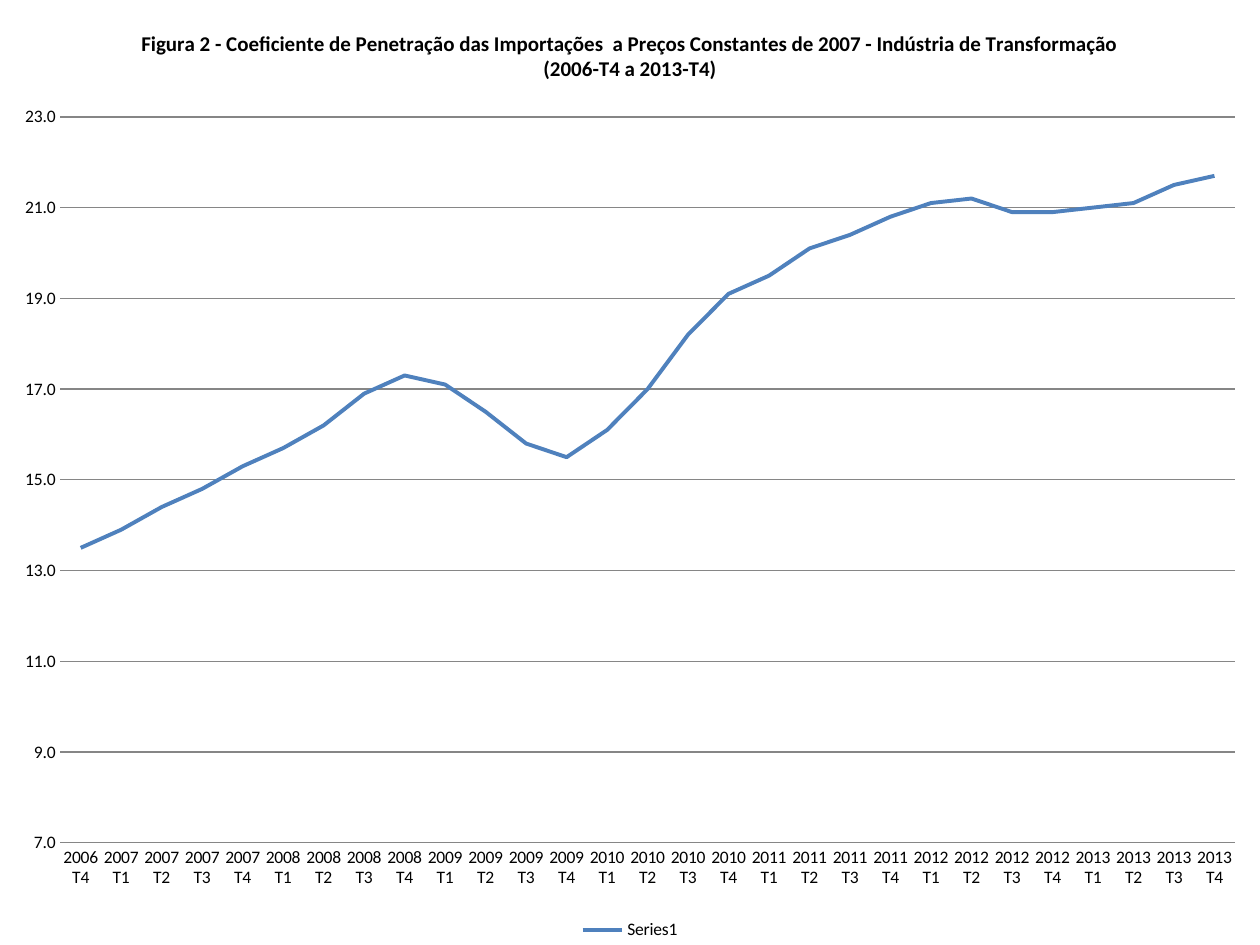
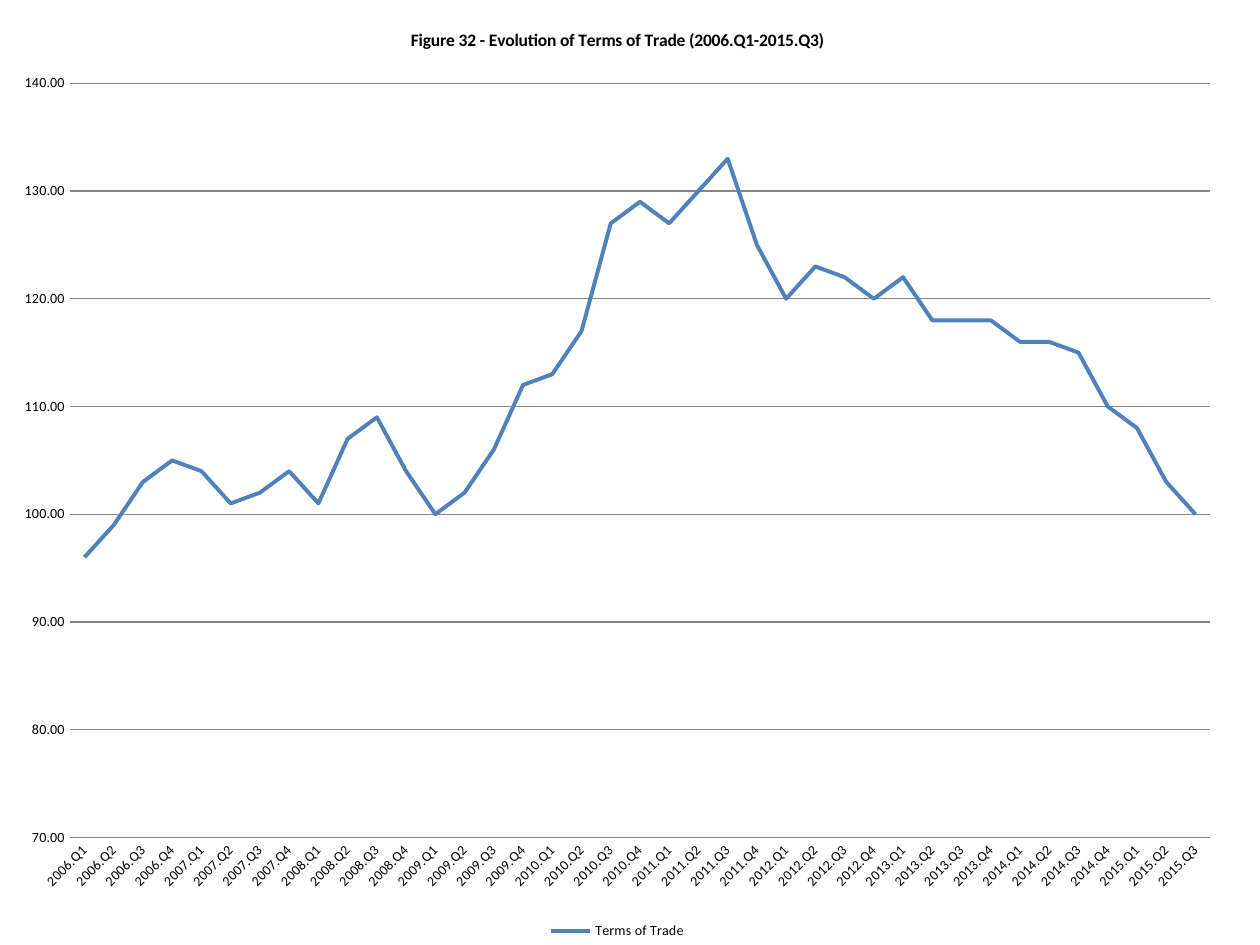
import lxml.etree
import pptx
import pptx.chart.data
import pptx.dml.color
import pptx.enum.chart
import pptx.oxml.ns
import pptx.util

BLACK = pptx.dml.color.RGBColor(0x00, 0x00, 0x00)
LINE_BLUE = pptx.dml.color.RGBColor(0x4F, 0x81, 0xBD)
GRID_GREY = pptx.dml.color.RGBColor(0x86, 0x86, 0x86)
FONT_NAME = "Calibri"
BLANK_LAYOUT = 6
qn = pptx.oxml.ns.qn

IMPORT_PENETRATION = {
    "width": 1,
    "title": [
        "Figura 2 - Coeficiente de Penetração das Importações  a Preços Constantes de 2007 - Indústria de Transformação",
        "(2006-T4 a 2013-T4)",
    ],
    "title_size": 12,
    "label_size": 10,
    "scale": {"minimum_scale": 7, "maximum_scale": 23, "major_unit": 2},
    "number_format": "#,##0.0",
    "quarter": "{} T{}",
    "start": (2006, 4),
    "series": "Series1",
    "values": [
        13.5, 13.9, 14.4, 14.8, 15.3, 15.7, 16.2, 16.9, 17.3, 17.1,
        16.5, 15.8, 15.5, 16.1, 17, 18.2, 19.1, 19.5, 20.1, 20.4,
        20.8, 21.1, 21.2, 20.9, 20.9, 21, 21.1, 21.5, 21.7,
    ],
}

TERMS_OF_TRADE = {
    "width": 0.98,
    "title": ["Figure 32 - Evolution of Terms of Trade (2006.Q1-2015.Q3)"],
    "title_size": 10,
    "label_size": 8,
    "scale": {"minimum_scale": 70, "maximum_scale": 140, "major_unit": 10},
    "number_format": "0.00",
    "quarter": "{}.Q{}",
    "start": (2006, 1),
    "series": "Terms of Trade",
    "values": [
        96, 99, 103, 105, 104, 101, 102, 104, 101, 107, 109, 104, 100,
        102, 106, 112, 113, 117, 127, 129, 127, 130, 133, 125, 120, 123,
        122, 120, 122, 118, 118, 118, 116, 116, 115, 110, 108, 103, 100,
    ],
}


def apply_format(target, values):
    for name, value in values.items():
        setattr(target, name, value)


def format_font(font, size, bold=False):
    apply_format(font, {"name": FONT_NAME, "size": pptx.util.Pt(size), "bold": bold})
    font.color.rgb = BLACK


def format_line(line, color, width):
    line.color.rgb = color
    line.width = pptx.util.Pt(width)


def quarter_labels(figure):
    year, quarter = figure["start"]
    first = year * 4 + quarter - 1
    return [
        figure["quarter"].format(index // 4, index % 4 + 1)
        for index in range(first, first + len(figure["values"]))
    ]


def write_title(chart, figure):
    chart.has_title = True
    title = chart.chart_title
    for index, line in enumerate(figure["title"]):
        frame = title.text_frame
        para = frame.add_paragraph() if index else frame.paragraphs[0]
        span = para.add_run()
        span.text = line
        format_font(span.font, figure["title_size"], bold=True)
    element = chart.element.find(".//" + qn("c:title"))
    overlay = element.find(qn("c:overlay"))
    if overlay is None:
        overlay = lxml.etree.Element(qn("c:overlay"))
        element.find(qn("c:tx")).addnext(overlay)
        layout = element.find(qn("c:layout"))
        if layout is not None:
            layout.addnext(overlay)
    overlay.set("val", "0")


def format_axes(chart, figure):
    no_tick = pptx.enum.chart.XL_TICK_MARK.NONE
    for axis in (chart.category_axis, chart.value_axis):
        apply_format(axis, {"major_tick_mark": no_tick, "minor_tick_mark": no_tick})
        format_font(axis.tick_labels.font, figure["label_size"])
    chart.category_axis.has_major_gridlines = False
    chart.value_axis.has_major_gridlines = True
    apply_format(chart.value_axis, figure["scale"])
    apply_format(
        chart.value_axis.tick_labels,
        {"number_format": figure["number_format"], "number_format_is_linked": False},
    )
    chart.value_axis.format.line.fill.background()
    format_line(chart.category_axis.format.line, GRID_GREY, 0.75)
    format_line(chart.value_axis.major_gridlines.format.line, GRID_GREY, 0.75)


def format_legend(chart, figure):
    chart.has_legend = True
    apply_format(
        chart.legend,
        {
            "position": pptx.enum.chart.XL_LEGEND_POSITION.BOTTOM,
            "include_in_layout": False,
        },
    )
    format_font(chart.legend.font, figure["label_size"])


def add_line_figure(page, box, figure):
    data = pptx.chart.data.CategoryChartData()
    data.categories = quarter_labels(figure)
    data.add_series(figure["series"], figure["values"])
    chart = page.shapes.add_chart(pptx.enum.chart.XL_CHART_TYPE.LINE, *box, data).chart
    format_font(chart.font, 10)
    write_title(chart, figure)
    format_axes(chart, figure)
    format_legend(chart, figure)
    plot = chart.plots[0]
    plot.vary_by_categories = False
    series = plot.series[0]
    series.smooth = False
    series.marker.style = pptx.enum.chart.XL_MARKER_STYLE.NONE
    format_line(series.format.line, LINE_BLUE, 2.25)


def main():
    deck = pptx.Presentation()
    apply_format(
        deck,
        {"slide_width": pptx.util.Inches(10), "slide_height": pptx.util.Inches(7.5)},
    )
    for figure in (IMPORT_PENETRATION, TERMS_OF_TRADE):
        page = deck.slides.add_slide(deck.slide_layouts[BLANK_LAYOUT])
        box = (0, 0, int(deck.slide_width * figure["width"]), deck.slide_height)
        add_line_figure(page, box, figure)
    deck.save("out.pptx")


if __name__ == "__main__":
    main()
